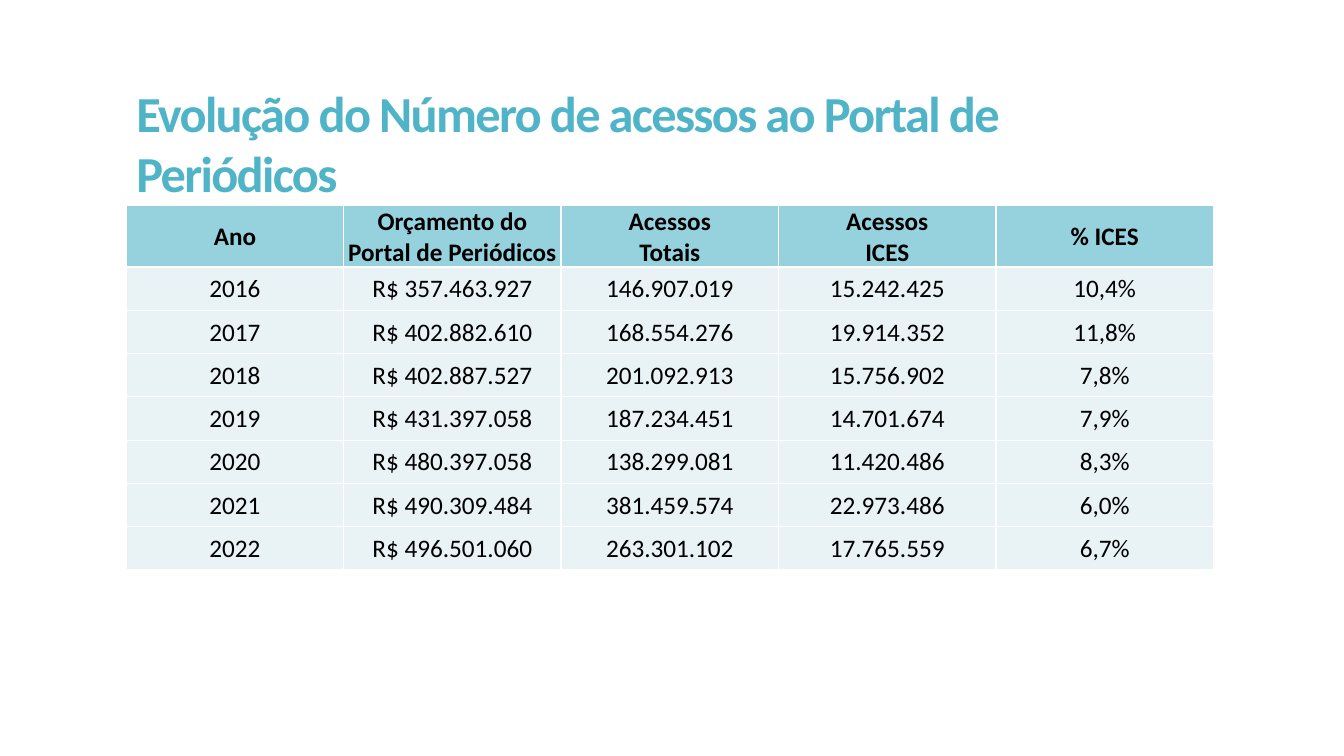
from dataclasses import dataclass

import lxml.etree
import pptx
import pptx.dml.color
import pptx.enum.text
import pptx.oxml.ns
import pptx.presentation
import pptx.slide
import pptx.table
import pptx.util
from pptx.util import Cm


@dataclass(frozen=True)
class Theme:
    font: str = "Calibri"
    title_size: int = 36
    table_size: int = 18
    title_color: str = "50B4C8"
    text_color: str = "000000"
    header_fill: str = "96D2DE"
    body_fill: str = "E9F2F5"
    border_color: str = "FFFFFF"


@dataclass(frozen=True)
class RowStyle:
    height: pptx.util.Length
    fill: str
    bold: bool


@dataclass(frozen=True)
class YearAccess:
    year: str
    budget: str
    total: str
    ices: str
    share: str

    def values(self) -> tuple[str, ...]:
        return self.year, self.budget, self.total, self.ices, self.share


THEME = Theme()
HEADER_STYLE = RowStyle(Cm(1.55), THEME.header_fill, True)
BODY_STYLE = RowStyle(Cm(1.09), THEME.body_fill, False)
TITLE = "Evolução do Número de acessos ao Portal de Periódicos"
HEADINGS = ("Ano", "Orçamento do Portal de Periódicos", "Acessos\nTotais", "Acessos\nICES", "% ICES")
YEARS = (
    YearAccess("2016", "R$ 357.463.927", "146.907.019", "15.242.425", "10,4%"),
    YearAccess("2017", "R$ 402.882.610", "168.554.276", "19.914.352", "11,8%"),
    YearAccess("2018", "R$ 402.887.527", "201.092.913", "15.756.902", "7,8%"),
    YearAccess("2019", "R$ 431.397.058", "187.234.451", "14.701.674", "7,9%"),
    YearAccess("2020", "R$ 480.397.058", "138.299.081", "11.420.486", "8,3%"),
    YearAccess("2021", "R$ 490.309.484", "381.459.574", "22.973.486", "6,0%"),
    YearAccess("2022", "R$ 496.501.060", "263.301.102", "17.765.559", "6,7%"),
)


def apply_format(target: object, values: dict[str, object]) -> None:
    for name, value in values.items():
        setattr(target, name, value)


def format_span(span: object, size: int, color: str, bold: bool) -> None:
    apply_format(span.font, {"name": THEME.font, "size": pptx.util.Pt(size), "bold": bold})
    span.font.color.rgb = pptx.dml.color.RGBColor.from_string(color)


def draw_title(page: pptx.slide.Slide) -> None:
    box = page.shapes.title
    apply_format(box, {"left": Cm(3.18), "top": Cm(1.93), "width": Cm(26.39), "height": Cm(1.8)})
    frame = box.text_frame
    frame.text = TITLE
    apply_format(frame, {
        "word_wrap": True,
        "auto_size": pptx.enum.text.MSO_AUTO_SIZE.SHAPE_TO_FIT_TEXT,
        "vertical_anchor": pptx.enum.text.MSO_ANCHOR.TOP,
    })
    para = frame.paragraphs[0]
    para.alignment = pptx.enum.text.PP_ALIGN.LEFT
    span = para.runs[0]
    format_span(span, THEME.title_size, THEME.title_color, True)
    span.font._element.set("spc", "-120")


def add_borders(cell: pptx.table._Cell) -> None:
    properties = cell._tc.get_or_add_tcPr()
    qualify = pptx.oxml.ns.qn
    for side in ("L", "R", "T", "B"):
        line = lxml.etree.SubElement(properties, qualify(f"a:ln{side}"), w=str(pptx.util.Pt(1)))
        fill = lxml.etree.SubElement(line, qualify("a:solidFill"))
        lxml.etree.SubElement(fill, qualify("a:srgbClr"), val=THEME.border_color)


def fill_cell(cell: pptx.table._Cell, text: str, style: RowStyle) -> None:
    cell.text = text
    apply_format(cell, {
        "margin_left": Cm(0.02),
        "margin_right": Cm(0.02),
        "margin_top": Cm(0.02),
        "margin_bottom": Cm(0),
        "vertical_anchor": pptx.enum.text.MSO_ANCHOR.MIDDLE,
    })
    add_borders(cell)
    cell.fill.solid()
    cell.fill.fore_color.rgb = pptx.dml.color.RGBColor.from_string(style.fill)
    for para in cell.text_frame.paragraphs:
        para.alignment = pptx.enum.text.PP_ALIGN.CENTER
        for span in para.runs:
            format_span(span, THEME.table_size, THEME.text_color, style.bold)


def draw_table(page: pptx.slide.Slide) -> None:
    rows = [(HEADINGS, HEADER_STYLE)] + [(year.values(), BODY_STYLE) for year in YEARS]
    height = sum(style.height for _, style in rows)
    table = page.shapes.add_table(
        len(rows), len(HEADINGS), Cm(3.18), Cm(5.18), Cm(27.4), height
    ).table
    for row, (texts, style) in zip(table.rows, rows):
        row.height = style.height
        for cell, text in zip(row.cells, texts):
            fill_cell(cell, text, style)


def build_deck() -> pptx.presentation.Presentation:
    deck = pptx.Presentation()
    apply_format(deck, {"slide_width": Cm(33.87), "slide_height": Cm(19.05)})
    page = deck.slides.add_slide(deck.slide_layouts.get_by_name("Title Only"))
    draw_title(page)
    draw_table(page)
    return deck


if __name__ == "__main__":
    build_deck().save("out.pptx")
